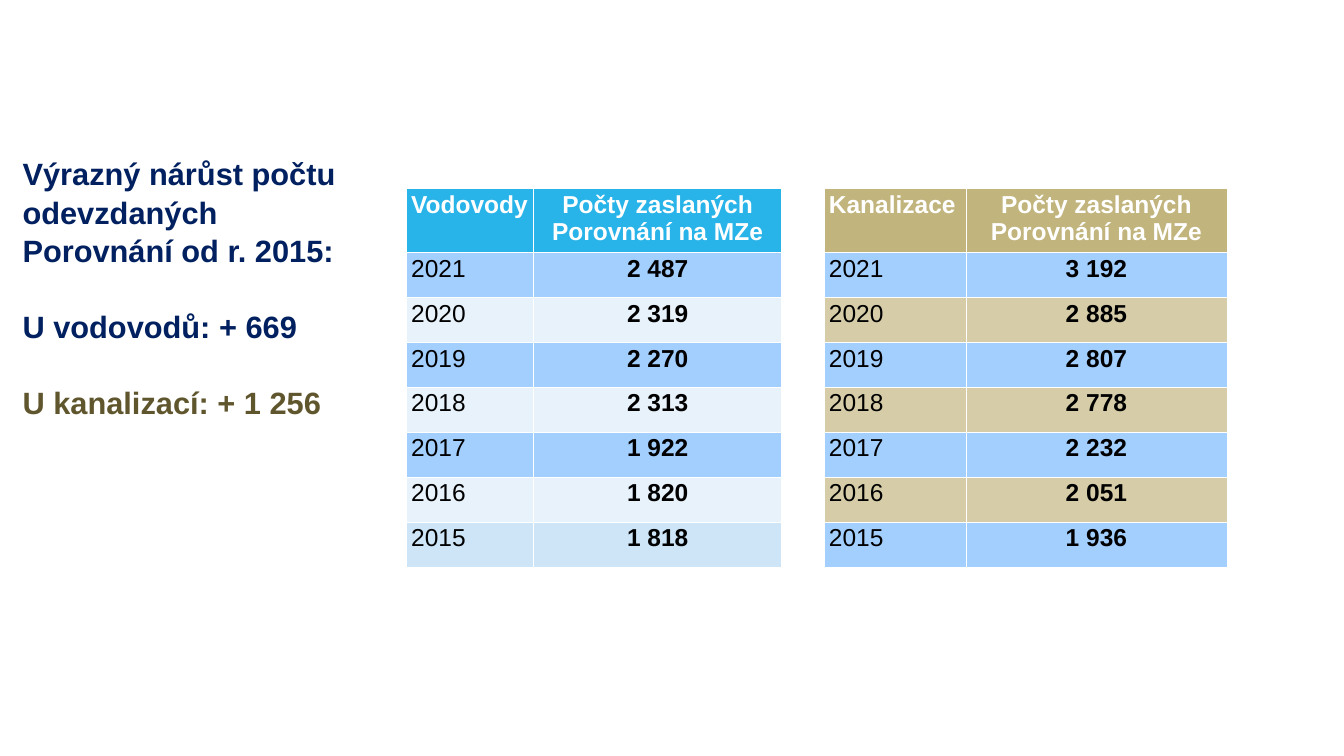
import pptx
import pptx.dml.color
import pptx.enum.text
import pptx.oxml
import pptx.oxml.ns
import pptx.util

COLORS = {
    "navy": "002060", "olive": "60562E", "white": "FFFFFF", "black": "000000",
    "cyan": "29B4E9", "khaki": "C1B47D", "blue": "A3CFFF",
    "ice": "E8F2FB", "pale": "CDE5F7", "sand": "D6CDA8",
}
FONT = "Arial"

# Content
SUMMARY = [
    ("Výrazný nárůst počtu odevzdaných Porovnání od r. 2015:", "navy"),
    ("U vodovodů: + 669", "navy"),
    ("U kanalizací: + 1 256", "olive"),
]
COUNT_HEADING = "Počty zaslaných Porovnání na MZe"
YEARS = range(2021, 2014, -1)
# Left edge and column widths are percentages of the slide width
TABLES = [
    {"heading": "Vodovody", "left": 30.22, "columns": (9.49, 18.45),
     "header": "cyan", "bands": ("blue", "ice"), "last": "pale",
     "counts": ["2 487", "2 319", "2 270", "2 313", "1 922", "1 820", "1 818"]},
    {"heading": "Kanalizace", "left": 61.3, "columns": (10.57, 19.42),
     "header": "khaki", "bands": ("blue", "sand"), "last": "blue",
     "counts": ["3 192", "2 885", "2 807", "2 778", "2 232", "2 051", "1 936"]},
]

# Vertical measures are percentages of the slide height
TABLE_TOP, HEADER_HEIGHT, ROW_HEIGHT = 24.93, 8.47, 5.94
SUMMARY_BOX = (1.31, 19.87, 25.76, 59.47)

presentation = pptx.Presentation()
presentation.slide_width = pptx.util.Inches(26.67)
presentation.slide_height = pptx.util.Inches(15)
slide = presentation.slides.add_slide(presentation.slide_layouts[6])


def across(percent):
    return round(presentation.slide_width * percent / 100)


def down(percent):
    return round(presentation.slide_height * percent / 100)


def color(name):
    return pptx.dml.color.RGBColor.from_string(COLORS[name])


def add_run(paragraph, text, size, color_name, bold):
    run = paragraph.add_run()
    run.text = text
    run.font.name = FONT
    run.font.size = pptx.util.Pt(size)
    run.font.bold = bold
    run.font.color.rgb = color(color_name)


def set_borders(cell, bottom_width):
    properties = cell._tc.get_or_add_tcPr()
    widths = {"lnL": 1, "lnR": 1, "lnT": 1, "lnB": bottom_width}
    for position, (side, width) in enumerate(widths.items()):
        properties.insert(position, pptx.oxml.parse_xml(
            f'<a:{side} {pptx.oxml.ns.nsdecls("a")} w="{pptx.util.Pt(width)}">'
            f'<a:solidFill><a:srgbClr val="{COLORS["white"]}"/></a:solidFill>'
            f'</a:{side}>'))


def add_count_table(data):
    rows = [(data["heading"], COUNT_HEADING)]
    rows += [(str(year), count) for year, count in zip(YEARS, data["counts"])]
    height = HEADER_HEIGHT + ROW_HEIGHT * len(YEARS)
    table = slide.shapes.add_table(
        len(rows), 2, across(data["left"]), down(TABLE_TOP),
        across(sum(data["columns"])), down(height)).table
    for column, width in zip(table.columns, data["columns"]):
        column.width = across(width)
    for row_index, texts in enumerate(rows):
        is_header = row_index == 0
        table.rows[row_index].height = down(HEADER_HEIGHT if is_header else ROW_HEIGHT)
        if is_header:
            fill = data["header"]
        elif row_index == len(rows) - 1:
            fill = data["last"]
        else:
            fill = data["bands"][(row_index - 1) % 2]
        for column_index, text in enumerate(texts):
            cell = table.cell(row_index, column_index)
            cell.fill.solid()
            cell.fill.fore_color.rgb = color(fill)
            set_borders(cell, 3 if is_header else 1)
            paragraph = cell.text_frame.paragraphs[0]
            if column_index == 1:
                paragraph.alignment = pptx.enum.text.PP_ALIGN.CENTER
            add_run(paragraph, text, 35, "white" if is_header else "black",
                    is_header or column_index == 1)


# Summary text, one empty line's height between paragraphs
left, top, width, height = SUMMARY_BOX
text_frame = slide.shapes.add_textbox(
    across(left), down(top), across(width), down(height)).text_frame
text_frame.word_wrap = True
for index, (text, color_name) in enumerate(SUMMARY):
    paragraph = text_frame.paragraphs[0] if index == 0 else text_frame.add_paragraph()
    paragraph.line_spacing = 1.05
    if index:
        paragraph.space_before = pptx.util.Pt(53)
    add_run(paragraph, text, 44, color_name, True)

# Tables of counts by year
for data in TABLES:
    add_count_table(data)

presentation.save("out.pptx")
